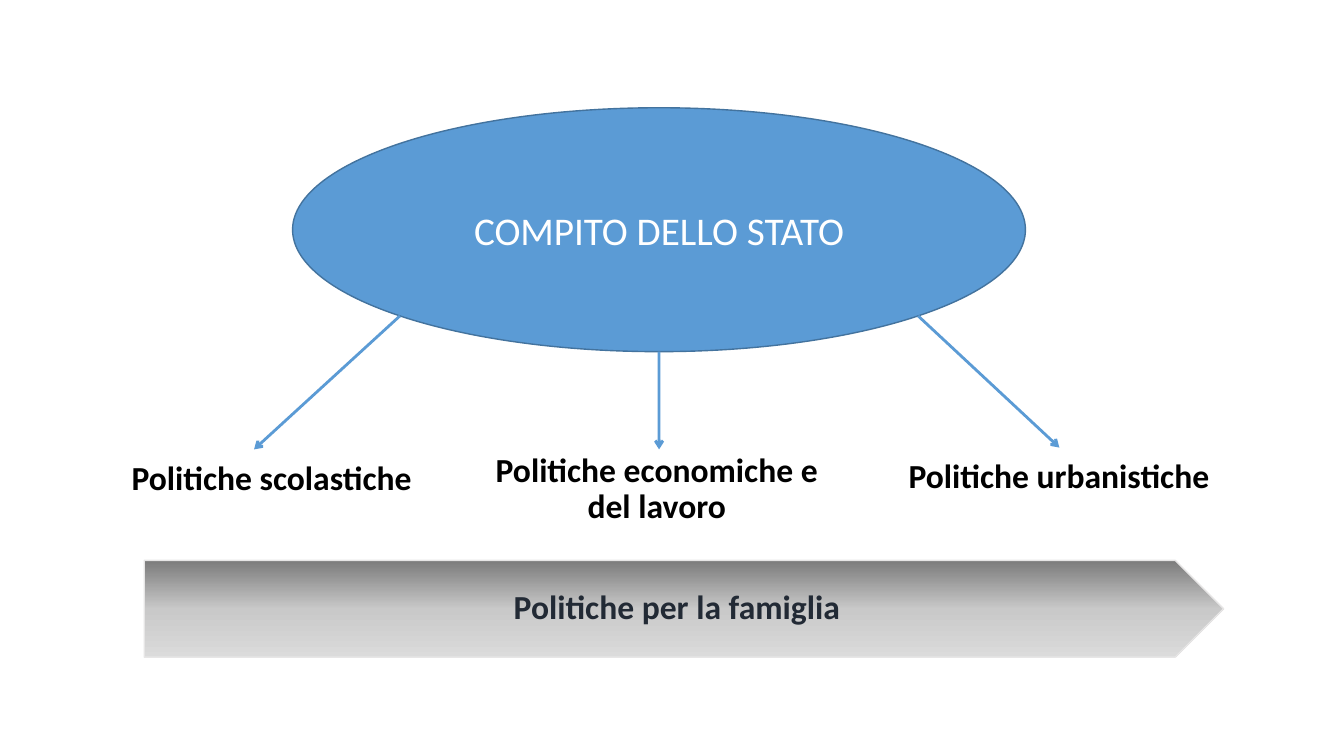
from math import cos, radians, sin

from lxml import etree
from pptx import Presentation
from pptx.dml.color import RGBColor
from pptx.enum import shapes, text
from pptx.oxml import ns
from pptx.util import Pt

BLUE = RGBColor(0x5B, 0x9B, 0xD5)
BLUE_EDGE = RGBColor(0x43, 0x73, 0x9E)
WHITE = RGBColor(0xFF, 0xFF, 0xFF)
BLACK = RGBColor(0, 0, 0)
NAVY = RGBColor(0x22, 0x2A, 0x35)
PALE_EDGE = RGBColor(0xE7, 0xE6, 0xE6)
BANNER_STOPS = [(0, RGBColor(0x7C, 0x7C, 0x7C)),
                (51, RGBColor(0xC9, 0xC9, 0xC9)),
                (100, RGBColor(0xDB, 0xDB, 0xDB))]

LABEL = {"size": Pt(24), "bold": True}
LABEL_W, LABEL_H = 255.6, 42.5


def write(sp, words, color, line_spacing=None, **font):
    tf = sp.text_frame
    tf.word_wrap = True
    tf.vertical_anchor = text.MSO_ANCHOR.MIDDLE
    p = tf.paragraphs[0]
    p.alignment = text.PP_ALIGN.CENTER
    p.line_spacing = line_spacing
    r = p.add_run()
    r.text = words
    for name, value in {"name": "Calibri", **font}.items():
        setattr(r.font, name, value)
    r.font.color.rgb = color
    return tf


def add_shape(slide, kind, box, edge):
    sp = slide.shapes.add_shape(kind, *map(Pt, box))
    sp.shadow.inherit = False
    sp.line.color.rgb = edge
    sp.line.width = Pt(1)
    return sp


def add_label(slide, box, words, color):
    sp = slide.shapes.add_textbox(*map(Pt, box))
    return write(sp, words, color, line_spacing=0.9, **LABEL)


def add_arrow(slide, start, end):
    cxn = slide.shapes.add_connector(
        shapes.MSO_CONNECTOR.STRAIGHT, *map(Pt, start + end))
    cxn.line.color.rgb = BLUE
    cxn.line.width = Pt(2)
    ln = cxn.line._get_or_add_ln()
    etree.SubElement(ln, ns.qn("a:tailEnd"), type="arrow")
    etree.SubElement(cxn._element.spPr, ns.qn("a:effectLst"))


def add_state(slide, box):
    """Ellipse with the state's task."""
    sp = add_shape(slide, shapes.MSO_SHAPE.OVAL, box, BLUE_EDGE)
    sp.fill.solid()
    sp.fill.fore_color.rgb = BLUE
    write(sp, "COMPITO DELLO STATO", WHITE, size=Pt(28))


def add_policies(slide, state_box, policies):
    """Arrows from the ellipse's rim to the policy labels."""
    x, y, w, h = state_box
    for words, angle, tip, corner in policies:
        rim = (x + w / 2 * (1 + cos(radians(angle))),
               y + h / 2 * (1 + sin(radians(angle))))
        add_arrow(slide, rim, tip)
        add_label(slide, corner + (LABEL_W, LABEL_H), words, BLACK)


def add_family_banner(slide, box):
    """Shaded pentagon with its caption."""
    x, y, w, h = box
    sp = add_shape(slide, shapes.MSO_SHAPE.PENTAGON, box, PALE_EDGE)
    sp.fill.gradient()
    sp.fill.gradient_angle = 270
    stops = sp._element.spPr.find(ns.qn("a:gradFill")).find(ns.qn("a:gsLst"))
    for old in list(stops):
        stops.remove(old)
    for percent, color in BANNER_STOPS:
        gs = etree.SubElement(stops, ns.qn("a:gs"), pos=str(percent * 1000))
        etree.SubElement(gs, ns.qn("a:srgbClr"), val=str(color))

    tf = add_label(slide, (x, y, w - 17, h), "Politiche per la famiglia", NAVY)
    margins = {"margin_left": 10, "margin_top": 5,
               "margin_right": 3, "margin_bottom": 5}
    for name, value in margins.items():
        setattr(tf, name, Pt(value))


def main():
    prs = Presentation()
    prs.slide_width, prs.slide_height = Pt(960), Pt(540)
    slide = prs.slides.add_slide(prs.slide_layouts[6])

    state_box = (209, 77, 523.5, 174.2)
    # Label, rim angle in degrees, arrow tip, label corner
    policies = [
        ("Politiche scolastiche", 135, (181.5, 321), (66.2, 321)),
        ("Politiche economiche e del lavoro", 90, (470.8, 321), (341.3, 328.3)),
        ("Politiche urbanistiche", 45, (756.7, 319.7), (628.6, 319.7)),
    ]
    add_state(slide, state_box)
    add_policies(slide, state_box, policies)
    add_family_banner(slide, (103, 400.3, 771, 69.1))
    prs.save("out.pptx")


if __name__ == "__main__":
    main()
